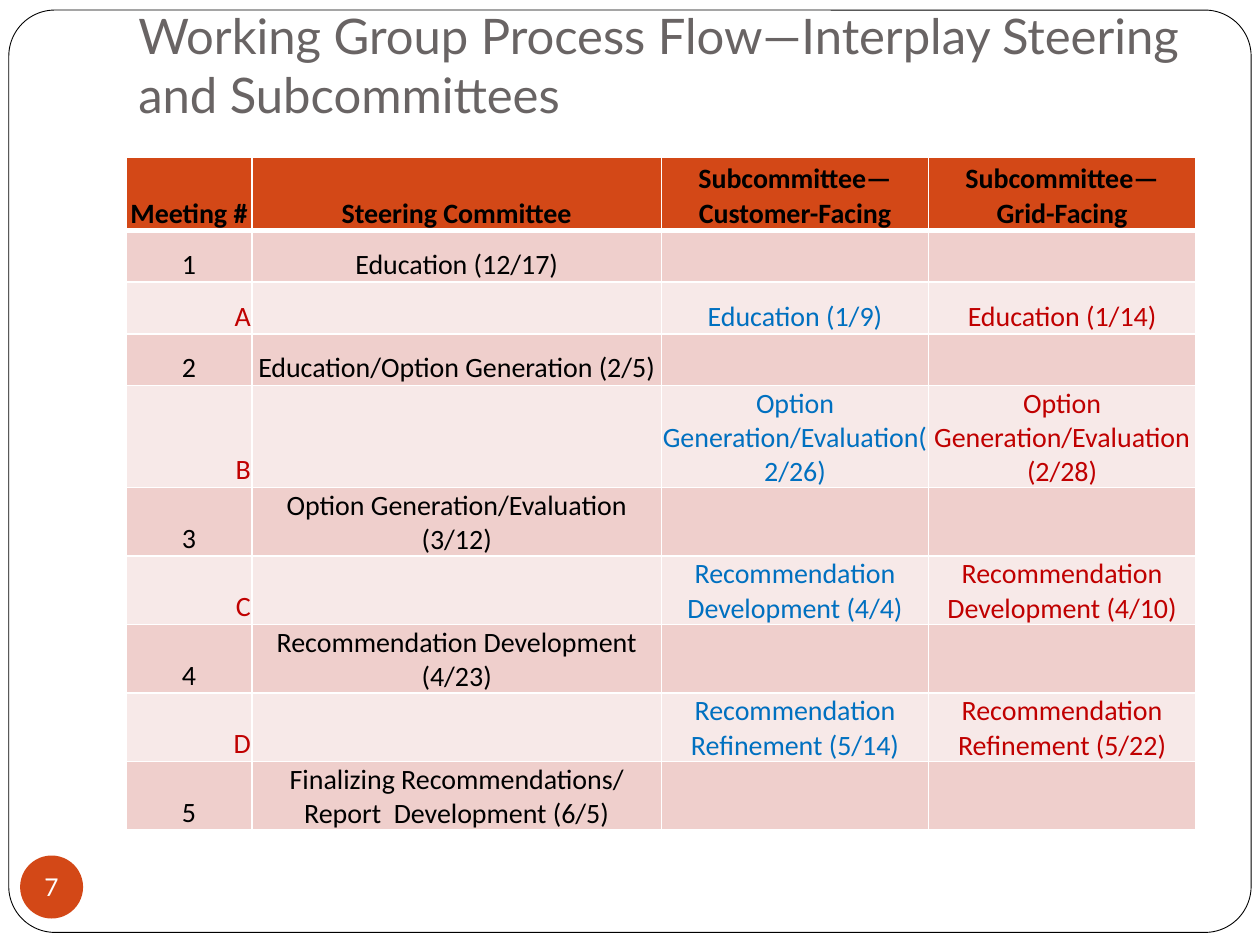
from lxml.etree import SubElement
from pptx import Presentation
from pptx.dml.color import RGBColor
from pptx.enum.shapes import MSO_SHAPE
from pptx.enum.text import MSO_ANCHOR, PP_ALIGN
from pptx.oxml import parse_xml
from pptx.oxml.ns import nsdecls
from pptx.util import Inches, Pt

WHITE = RGBColor(0xFF, 0xFF, 0xFF)
BLACK = RGBColor(0x00, 0x00, 0x00)
GRAY = RGBColor(0x69, 0x64, 0x64)
ORANGE = RGBColor(0xD3, 0x48, 0x17)
DARK_BAND = RGBColor(0xEF, 0xCF, 0xCC)
LIGHT_BAND = RGBColor(0xF7, 0xE9, 0xE8)
RED = RGBColor(0xC0, 0x00, 0x00)
BLUE = RGBColor(0x00, 0x70, 0xC0)


def add_text(paragraph, text, size, font_name, color, bold=False):
    run = paragraph.add_run()
    run.text = text
    run.font.size = Pt(size)
    run.font.name = font_name
    run.font.color.rgb = color
    run.font.bold = bold


def set_borders(cell, bottom_width):
    # Border lines come before the fill in the cell properties
    properties = cell._tc.get_or_add_tcPr()
    widths = [("lnL", 1), ("lnR", 1), ("lnT", 1), ("lnB", bottom_width)]
    for position, (tag, width) in enumerate(widths):
        line = parse_xml(
            f'<a:{tag} {nsdecls("a")} w="{Pt(width)}"><a:solidFill>'
            f'<a:srgbClr val="{WHITE}"/></a:solidFill></a:{tag}>'
        )
        properties.insert(position, line)


presentation = Presentation()
presentation.slide_width = Inches(10)
presentation.slide_height = Inches(7.5)
slide = presentation.slides.add_slide(presentation.slide_layouts[6])

# Rounded frame
frame = slide.shapes.add_shape(
    MSO_SHAPE.ROUNDED_RECTANGLE, Inches(0.07), Inches(0.08), Inches(9.86), Inches(7.32)
)
frame.adjustments[0] = 0.05
frame.shadow.inherit = False
frame.fill.solid()
frame.fill.fore_color.rgb = WHITE
frame.line.color.rgb = BLACK
frame.line.width = Pt(0.5)

# Title
title = slide.shapes.add_textbox(Inches(1), Inches(0.3), Inches(8.5), Inches(0.78))
title.text_frame.word_wrap = True
title.text_frame.vertical_anchor = MSO_ANCHOR.BOTTOM
title.text_frame.margin_bottom = Inches(0.1)
add_text(
    title.text_frame.paragraphs[0],
    "Working Group Process Flow—Interplay Steering and Subcommittees",
    28, "Lato", GRAY,
)

# Slide number badge
badge = slide.shapes.add_shape(
    MSO_SHAPE.OVAL, Inches(0.16), Inches(6.79), Inches(0.5), Inches(0.5)
)
badge.shadow.inherit = False
badge.fill.solid()
badge.fill.fore_color.rgb = ORANGE
badge.line.fill.background()
badge_text = badge.text_frame
badge_text.word_wrap = False
badge_text.vertical_anchor = MSO_ANCHOR.MIDDLE
badge_text.margin_left = badge_text.margin_right = 0
badge_text.margin_top = badge_text.margin_bottom = 0
badge_text.paragraphs[0].alignment = PP_ALIGN.CENTER
add_text(badge_text.paragraphs[0], "7", 14, "Lato", WHITE)

# Meeting schedule: steering rows alternate with subcommittee rows
rows = [
    ["Meeting #", "Steering Committee", "Subcommittee—Customer-Facing",
     "Subcommittee—\nGrid-Facing"],
    ["1", "Education (12/17)", "", ""],
    ["A", "", "Education (1/9)", "Education (1/14)"],
    ["2", "Education/Option Generation (2/5)", "", ""],
    ["B", "", "Option Generation/Evaluation(2/26)", "Option Generation/Evaluation (2/28)"],
    ["3", "Option Generation/Evaluation (3/12)", "", ""],
    ["C", "", "Recommendation Development (4/4)", "Recommendation Development (4/10)"],
    ["4", "Recommendation Development (4/23)", "", ""],
    ["D", "", "Recommendation Refinement (5/14)", "Recommendation Refinement (5/22)"],
    ["5", "Finalizing Recommendations/ Report  Development (6/5)", "", ""],
]
column_widths = [1, 3.25, 2.12, 2.12]
subcommittee_colors = [RED, BLACK, BLUE, RED]

table_frame = slide.shapes.add_table(
    len(rows), len(column_widths), Inches(1), Inches(1.25), Inches(8.5), Inches(5.33)
)
table = table_frame.table
for column, width in zip(table.columns, column_widths):
    column.width = Inches(width)

for row_index, texts in enumerate(rows):
    is_header = row_index == 0
    is_subcommittee = not is_header and row_index % 2 == 0
    table.rows[row_index].height = Inches(0.58 if is_header else 0.41)
    for column_index, text in enumerate(texts):
        cell = table.cell(row_index, column_index)
        cell.fill.solid()
        cell.fill.fore_color.rgb = (
            ORANGE if is_header else LIGHT_BAND if is_subcommittee else DARK_BAND
        )
        set_borders(cell, 3 if is_header else 1)
        if not text:
            continue
        cell.vertical_anchor = MSO_ANCHOR.BOTTOM
        cell.margin_left = cell.margin_right = cell.margin_top = Inches(0.01)
        cell.margin_bottom = 0
        color = subcommittee_colors[column_index] if is_subcommittee else BLACK
        for line_index, line in enumerate(text.split("\n")):
            text_frame = cell.text_frame
            paragraph = text_frame.add_paragraph() if line_index else text_frame.paragraphs[0]
            is_letter = is_subcommittee and column_index == 0
            paragraph.alignment = PP_ALIGN.RIGHT if is_letter else PP_ALIGN.CENTER
            add_text(paragraph, line, 16, "Calibri", color, is_header)
table_frame.height = Inches(5.33)

presentation.save("out.pptx")
